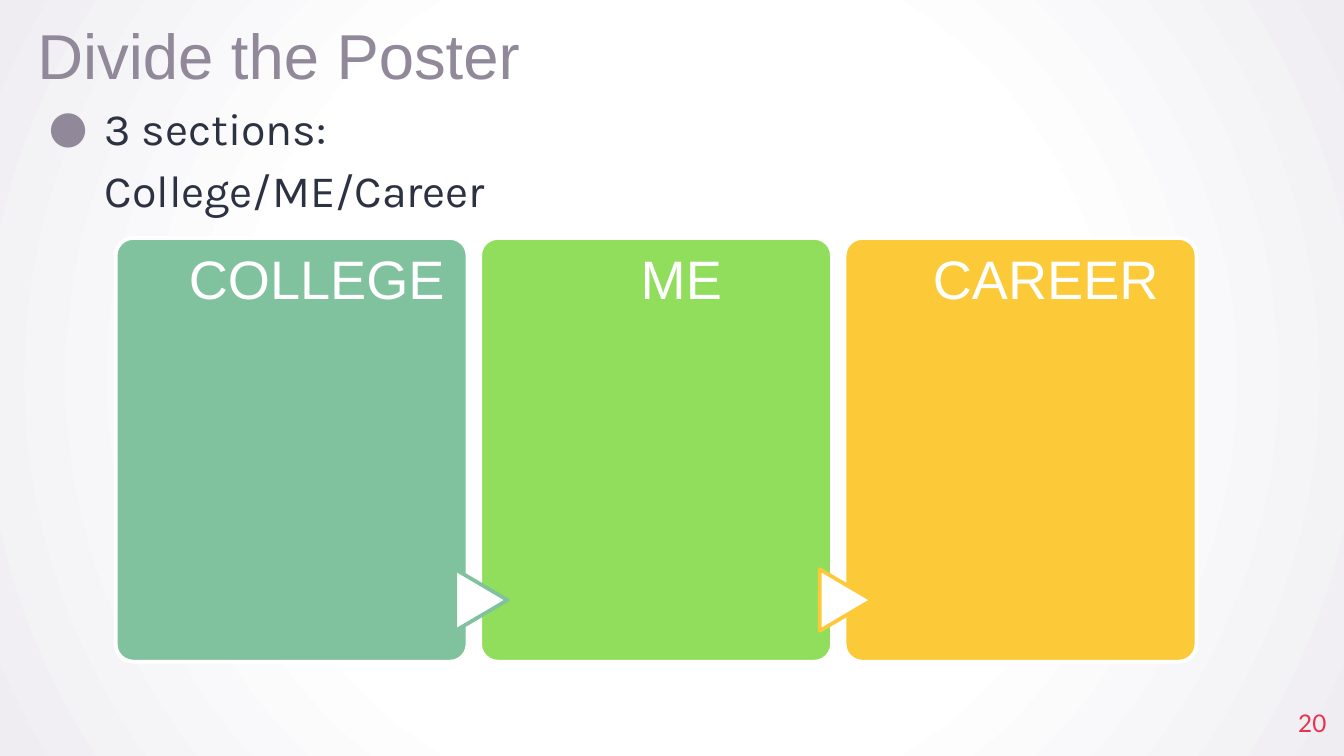
"""Build the "Divide the Poster" slide with its three linked section cards."""
from dataclasses import dataclass

from lxml import etree
from pptx import Presentation
from pptx.dml.color import RGBColor
from pptx.enum.shapes import MSO_SHAPE as Shape
from pptx.enum.text import MSO_ANCHOR as Anchor, MSO_AUTO_SIZE as AutoSize, PP_ALIGN as Align
from pptx.oxml.ns import qn
from pptx.util import Pt


@dataclass(frozen=True)
class Theme:
    white: str = "FFFFFF"
    edge: str = "EFEDF1"
    mauve: str = "918899"
    ink: str = "2C3242"
    red: str = "E63350"
    green: str = "7FC29D"
    lime: str = "91DE5D"
    yellow: str = "FCCA39"
    heading_font: str = "Arial"
    body_font: str = "Karla"
    number_font: str = "Lato"
    title_size: int = 34
    body_size: int = 24
    card_size: int = 29
    number_size: int = 13
    outline: int = 2


THEME = Theme()
CARD_LEFT, CARD_TOP, CARD_WIDTH, CARD_HEIGHT = 62, 127.5, 188.5, 227
CARD_STEP = 195.25
LABEL_INSET, LABEL_WIDTH = 37.5, 140.5
ARROW_WIDTH, ARROW_HEIGHT, ARROW_TOP = 33, 28, 307.5


def add_element(parent, tag, **attributes):
    """Append a drawing element with the given attributes."""
    return etree.SubElement(parent, qn(tag), attributes)


def paint_background(page):
    """Give the page a circular gradient that darkens at its edge."""
    page.background.fill.gradient()
    gradient = page.element.find(".//" + qn("a:gradFill"))
    for child in list(gradient):
        gradient.remove(child)
    stops = add_element(gradient, "a:gsLst")
    for position, color in ((0, THEME.white), (52, THEME.white), (100, THEME.edge)):
        stop = add_element(stops, "a:gs", pos=str(position * 1000))
        add_element(stop, "a:srgbClr", val=color)
    circle = add_element(gradient, "a:path", path="circle")
    add_element(circle, "a:fillToRect", l="50000", t="50000", r="50000", b="50000")


def place(box, left, top, width, height):
    """Move and size a box, in points."""
    box.left, box.top, box.width, box.height = map(Pt, (left, top, width, height))


def add_bullet(paragraph):
    """Give a paragraph a hanging round bullet."""
    properties = paragraph._p.get_or_add_pPr()
    properties.set("marL", str(Pt(36)))
    properties.set("indent", str(Pt(-30)))
    color = add_element(properties, "a:buClr")
    add_element(color, "a:srgbClr", val=THEME.mauve)
    add_element(properties, "a:buFont", typeface=THEME.body_font)
    add_element(properties, "a:buChar", char="●")


def write(box, text, font, size, color, align=Align.LEFT, anchor=Anchor.TOP,
          spacing=1.0, top_inset=0, bullet=False):
    """Write one formatted paragraph in a box."""
    frame = box.text_frame
    frame.word_wrap = True
    frame.auto_size = AutoSize.NONE
    frame.vertical_anchor = anchor
    frame.margin_left = frame.margin_right = frame.margin_bottom = 0
    frame.margin_top = Pt(top_inset)
    paragraph = frame.paragraphs[0]
    if bullet:
        add_bullet(paragraph)
    paragraph.alignment = align
    paragraph.line_spacing = spacing
    paragraph.space_before = Pt(0)
    span = paragraph.add_run()
    span.text = text
    span.font.name = font
    span.font.size = Pt(size)
    span.font.color.rgb = RGBColor.from_string(color)


def add_text(page, bounds, *args, **options):
    """Add a text box holding one paragraph."""
    box = page.shapes.add_textbox(*map(Pt, bounds))
    write(box, *args, **options)


def add_shape(page, kind, bounds, fill, line):
    """Add a flat outlined shape."""
    shape = page.shapes.add_shape(kind, *map(Pt, bounds))
    shape.shadow.inherit = False
    shape.fill.solid()
    shape.fill.fore_color.rgb = RGBColor.from_string(fill)
    shape.line.color.rgb = RGBColor.from_string(line)
    shape.line.width = Pt(THEME.outline)
    return shape


def add_arrow(page, card_left, color):
    """Add the triangle that points into a card across the gap before it."""
    center = card_left - (CARD_STEP - CARD_WIDTH) / 2 + 4
    bounds = (center - ARROW_WIDTH / 2, ARROW_TOP, ARROW_WIDTH, ARROW_HEIGHT)
    arrow = add_shape(page, Shape.FLOWCHART_EXTRACT, bounds, THEME.white, color)
    arrow.rotation = 90


def add_card(page, index, label, color, arrow_color):
    """Add a section card with its label and any arrow leading in."""
    left = CARD_LEFT + index * CARD_STEP
    bounds = (left, CARD_TOP, CARD_WIDTH, CARD_HEIGHT)
    card = add_shape(page, Shape.ROUNDED_RECTANGLE, bounds, color, THEME.white)
    card.adjustments[0] = 0.05
    if arrow_color:
        add_arrow(page, left, arrow_color)
    add_text(page, (left + LABEL_INSET, CARD_TOP, LABEL_WIDTH, CARD_HEIGHT), label,
             THEME.heading_font, THEME.card_size, THEME.white,
             align=Align.CENTER, spacing=0.9, top_inset=8)


def main():
    """Build and save the deck."""
    deck = Presentation()
    deck.slide_width, deck.slide_height = Pt(720), Pt(405)
    page = deck.slides.add_slide(deck.slide_layouts[1])
    paint_background(page)

    title, body = page.placeholders
    place(title, 20, 18, 585.5, 31)
    write(title, "Divide the Poster", THEME.heading_font, THEME.title_size, THEME.mauve,
          anchor=Anchor.BOTTOM, spacing=0.8)
    place(body, 20, 49.5, 345, 31)
    write(body, "3 sections: College/ME/Career", THEME.body_font, THEME.body_size,
          THEME.ink, spacing=1.15, bullet=True)
    add_text(page, (667.5, 371.5, 43, 31), "20", THEME.number_font, THEME.number_size,
             THEME.red, align=Align.RIGHT, anchor=Anchor.MIDDLE)

    sections = (
        ("COLLEGE", THEME.green, None),
        ("ME", THEME.lime, THEME.green),
        ("CAREER", THEME.yellow, THEME.yellow),
    )
    for index, section in enumerate(sections):
        add_card(page, index, *section)
    deck.save("out.pptx")


if __name__ == "__main__":
    main()
